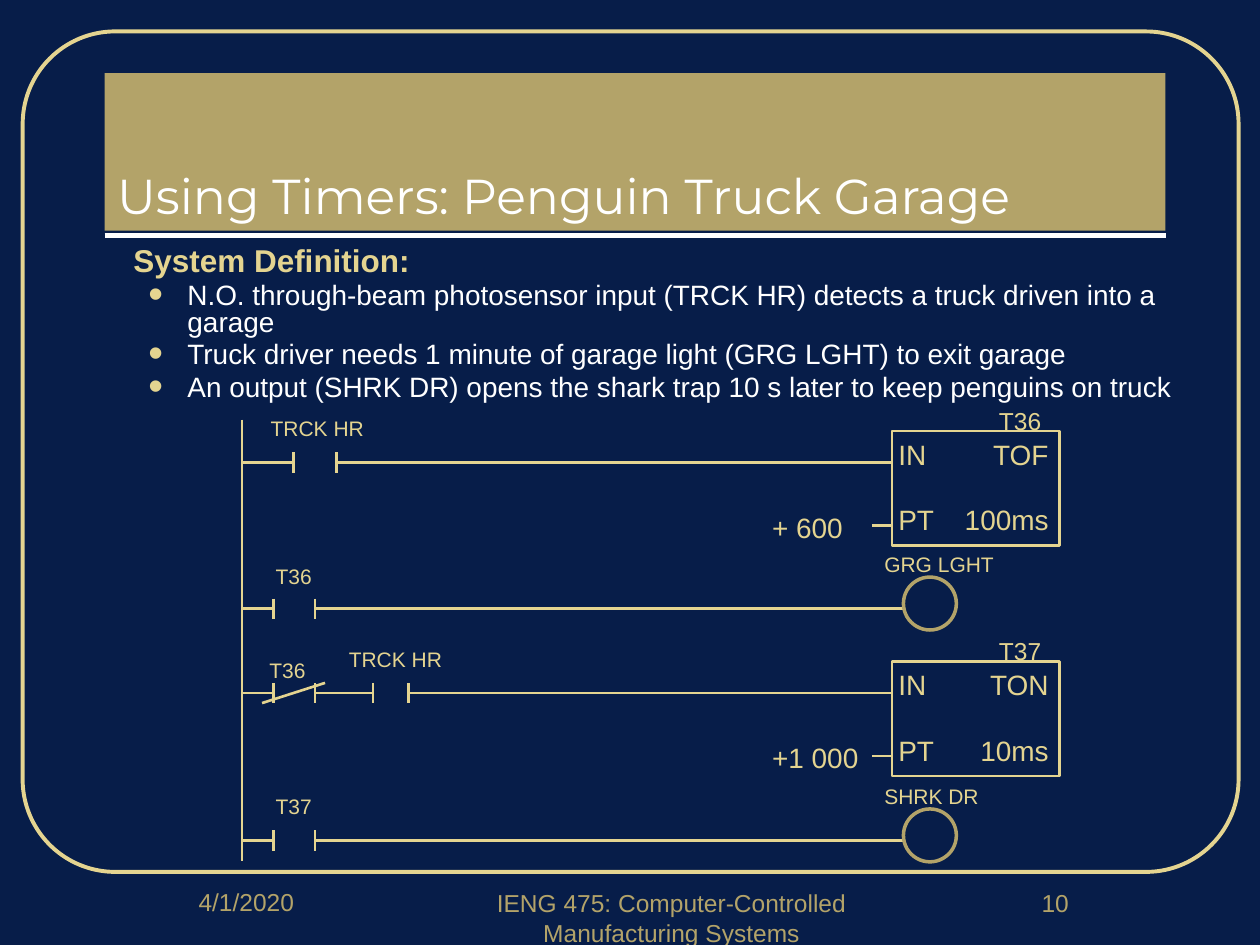
from pptx import Presentation
from pptx.dml.color import RGBColor
from pptx.enum.shapes import MSO_CONNECTOR as CONN, MSO_SHAPE as SHAPE
from pptx.enum.text import MSO_ANCHOR as ANCHOR, MSO_AUTO_SIZE as AUTO, PP_ALIGN as ALIGN
from pptx.oxml.ns import qn
from pptx.util import Inches, Pt
from lxml import etree

NAVY = RGBColor(0x07, 0x1D, 0x49)
GOLD = RGBColor(0xB3, 0xA3, 0x69)
PALE = RGBColor(0xE4, 0xD4, 0x90)
WHITE = RGBColor(0xFF, 0xFF, 0xFF)

prs = Presentation()
prs.slide_width, prs.slide_height = Inches(10), Inches(7.5)
s = prs.slides.add_slide(prs.slide_layouts[5])
s.background.fill.solid()
s.background.fill.fore_color.rgb = NAVY


def add_line(x1, y1, x2, y2, color=PALE, width=1.5):
    ln = s.shapes.add_connector(CONN.STRAIGHT, Inches(x1), Inches(y1), Inches(x2), Inches(y2))
    ln.line.color.rgb = color
    ln.line.width = Pt(width)
    etree.SubElement(ln._element.spPr, qn("a:effectLst"))


def add_text(sp, lines, size, color=PALE, align=ALIGN.LEFT, gap=0):
    """Write one paragraph per line, with gap points before each but the first."""
    tf = sp.text_frame
    tf.word_wrap = True
    tf.vertical_anchor = ANCHOR.TOP
    for i, line in enumerate(lines):
        p = tf.paragraphs[0] if i == 0 else tf.add_paragraph()
        p.alignment = align
        if i:
            p.space_before = Pt(gap)
        r = p.add_run()
        r.text = line
        r.font.size, r.font.name = Pt(size), "Arial"
        r.font.color.rgb = color
    return tf


# Frame and title
frame = s.shapes.add_shape(SHAPE.ROUNDED_RECTANGLE, Inches(0.18), Inches(0.25), Inches(9.65), Inches(6.67))
frame.adjustments[0] = 0.11
frame.shadow.inherit = False
frame.fill.background()
frame.line.color.rgb = PALE
frame.line.width = Pt(2.25)
add_line(0.83, 1.87, 9.25, 1.87, WHITE, 3)

title = s.shapes.title
title.left, title.top, title.width, title.height = Inches(0.83), Inches(0.58), Inches(8.42), Inches(1.25)
title.fill.solid()
title.fill.fore_color.rgb = GOLD
tf = title.text_frame
tf.auto_size = AUTO.NONE
tf.vertical_anchor = ANCHOR.BOTTOM
p = tf.paragraphs[0]
p.alignment = ALIGN.LEFT
r = p.add_run()
r.text = "Using Timers: Penguin Truck Garage"
r.font.size, r.font.name = Pt(28), "Montserrat"
r.font.color.rgb = WHITE

# System definition
body = s.shapes.add_textbox(Inches(0.58), Inches(1.92), Inches(9), Inches(1.49))
tf = add_text(body, [
    "System Definition:",
    "N.O. through-beam photosensor input (TRCK HR) detects a truck driven into a garage",
    "Truck driver needs 1 minute of garage light (GRG LGHT) to exit garage",
    "An output (SHRK DR) opens the shark trap 10 s later to keep penguins on truck",
], 16, WHITE, gap=3.2)
heading, *bullets = tf.paragraphs
heading.line_spacing = 0.8
heading.space_before = Pt(3.6)
heading._p.get_or_add_pPr().set("marL", str(Inches(0.38)))
font = heading.runs[0].font
font.size, font.bold = Pt(18), True
font.color.rgb = PALE
for p in bullets:
    p.line_spacing = 0.8
    pPr = p._p.get_or_add_pPr()
    pPr.set("marL", str(Inches(0.81)))
    pPr.set("indent", str(Inches(-0.31)))
    color = etree.SubElement(pPr, qn("a:buClr"))
    etree.SubElement(color, qn("a:srgbClr"), val=str(PALE))
    etree.SubElement(pPr, qn("a:buSzPct"), val="150000")
    etree.SubElement(pPr, qn("a:buFont"), typeface="Arial")
    etree.SubElement(pPr, qn("a:buChar"), char="•")

# Ladder rungs: height, right end, contacts as (left, right)
RAIL = 1.92
rungs = [
    (3.67, 7.08, [(2.33, 2.67)]),
    (4.83, 7.17, [(2.17, 2.5)]),
    (5.5, 7.08, [(2.17, 2.5), (2.96, 3.24)]),
    (6.67, 7.17, [(2.17, 2.5)]),
]
add_line(RAIL, 3.33, RAIL, 6.83)
for y, end, contacts in rungs:
    start = RAIL
    for left, right in contacts:
        add_line(start, y, left, y)
        for x in (left, right):
            add_line(x, y - 0.08, x, y + 0.08)
        start = right
    add_line(start, y, end, y)
add_line(2.08, 5.58, 2.58, 5.42)  # normally closed contact

# Contact and coil labels
for x, y, label in [
    (2.05, 3.25, "TRCK HR"), (2.09, 4.42, "T36"), (2.04, 5.17, "T36"),
    (2.67, 5.08, "TRCK HR"), (2.09, 6.25, "T37"),
    (6.92, 4.33, "GRG LGHT"), (6.92, 6.17, "SHRK DR"),
]:
    add_text(s.shapes.add_textbox(Inches(x), Inches(y), Inches(1.1), Inches(0.3)), [label], 12)

# Output coils
for y in (4.58, 6.42):
    coil = s.shapes.add_shape(SHAPE.OVAL, Inches(7.17), Inches(y), Inches(0.42), Inches(0.42))
    coil.shadow.inherit = False
    coil.fill.background()
    coil.line.color.rgb = GOLD
    coil.line.width = Pt(2)

# Timer blocks
LINE_GAP = 18.4  # one 16 pt line
for y, name, kind, base, preset in [
    (3.42, "T36", "TOF", "100ms", "+ 600"),
    (5.25, "T37", "TON", "10ms", "+1 000"),
]:
    block = s.shapes.add_shape(SHAPE.RECTANGLE, Inches(7.08), Inches(y), Inches(1.33), Inches(0.91))
    block.shadow.inherit = False
    block.fill.background()
    block.line.color.rgb = PALE
    block.line.width = Pt(1.5)
    tf = add_text(block, ["IN", "PT"], 16, gap=LINE_GAP)
    tf.margin_left = tf.margin_right = tf.margin_top = tf.margin_bottom = Inches(0.05)
    values = s.shapes.add_textbox(Inches(7.5), Inches(y), Inches(0.92), Inches(0.91))
    add_text(values, [kind, base], 16, align=ALIGN.RIGHT, gap=LINE_GAP)
    add_text(s.shapes.add_textbox(Inches(7.83), Inches(y - 0.25), Inches(0.67), Inches(0.34)), [name], 14)
    add_text(s.shapes.add_textbox(Inches(6.03), Inches(y + 0.58), Inches(0.92), Inches(0.37)), [preset], 16)
    add_line(6.92, y + 0.75, 7.08, y + 0.75)

# Footer
for x, y, width, text in [
    (0.83, 6.99, 2.25, "4/1/2020"),
    (3.58, 7, 3.5, "IENG 475: Computer-Controlled Manufacturing Systems"),
    (7.5, 7, 1.75, "10"),
]:
    sp = s.shapes.add_textbox(Inches(x), Inches(y), Inches(width), Inches(0.5))
    add_text(sp, [text], 14, GOLD, ALIGN.CENTER)

prs.save("out.pptx")
